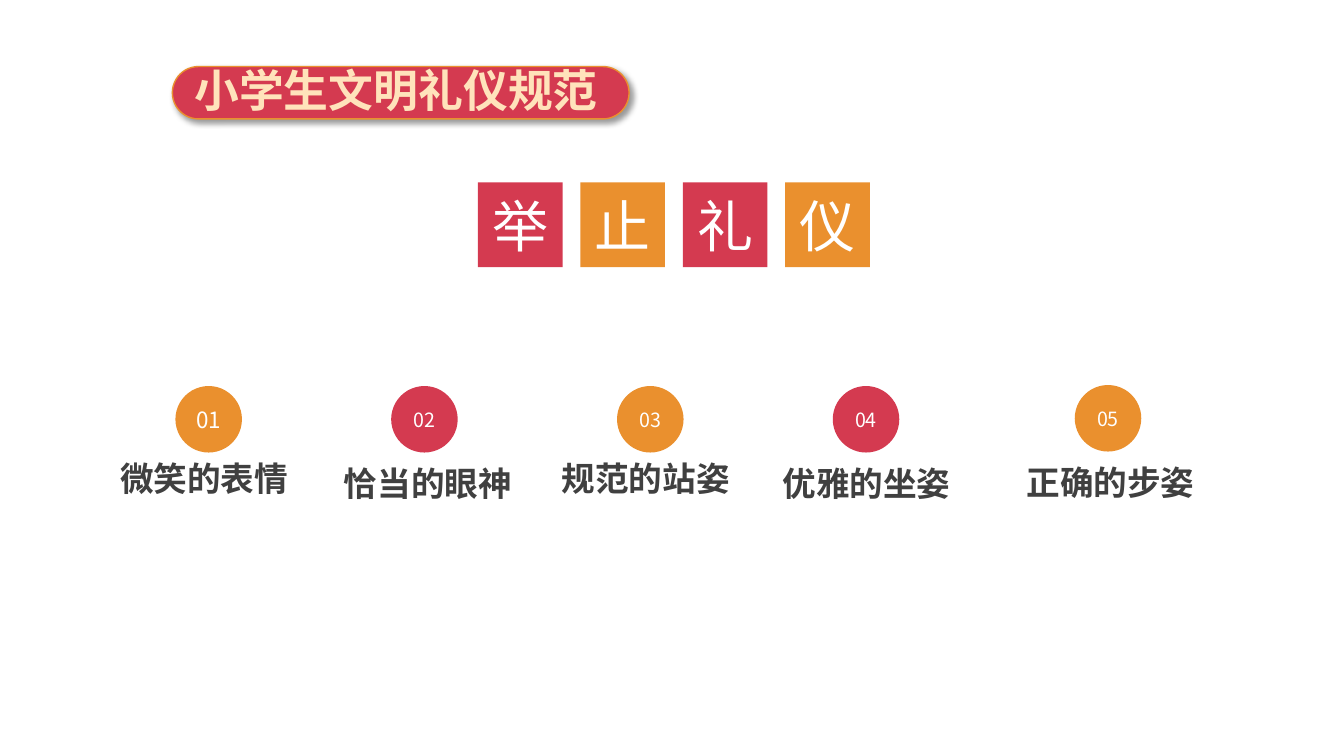
import pptx
import pptx.util
import pptx.dml.color
import pptx.enum.shapes
import pptx.enum.text
import pptx.oxml
import pptx.oxml.ns

Inches, Pt = pptx.util.Inches, pptx.util.Pt
SHAPE = pptx.enum.shapes.MSO_SHAPE
FONT = "Noto Sans CJK SC"
RED, ORANGE, CREAM, GREY, WHITE = "D43A50", "EA902E", "FFE3BB", "404040", "FFFFFF"

BANNER = "小学生文明礼仪规范"
HEADING = "举止礼仪"
# number, number size, colour, circle left, circle top, label, label left, label top
MANNERS = [
    ("01", 16, ORANGE, 1.74, 3.83, "微笑的表情", 0.26, 4.49),
    ("02", 14, RED, 3.88, 3.83, "恰当的眼神", 2.48, 4.54),
    ("03", 14, ORANGE, 6.12, 3.83, "规范的站姿", 4.64, 4.49),
    ("04", 14, RED, 8.26, 3.83, "优雅的坐姿", 6.83, 4.54),
    ("05", 14, ORANGE, 10.66, 3.82, "正确的步姿", 9.25, 4.53),
]
TILE_LEFT, TILE_TOP, TILE_SIZE, TILE_STEP = 4.74, 1.81, 0.84, 1.016
CIRCLE_SIZE = 0.66
LABEL_WIDTH, LABEL_HEIGHT = 3.53, 0.5

BANNER_SHADOW = (
    f'<a:effectLst {pptx.oxml.ns.nsdecls("a")}>'
    '<a:outerShdw blurRad="50800" dist="38100" dir="2700000" algn="tl" rotWithShape="0">'
    '<a:srgbClr val="000000"><a:alpha val="40000"/></a:srgbClr>'
    '</a:outerShdw></a:effectLst>'
)


def color(hex_code):
    return pptx.dml.color.RGBColor.from_string(hex_code)


def write(shape, text, size, ink, bold=False):
    """Put one centred line into the shape, with the font set for Latin and Chinese."""
    shape.text_frame.word_wrap = True
    paragraph = shape.text_frame.paragraphs[0]
    paragraph.text = text
    paragraph.alignment = pptx.enum.text.PP_ALIGN.CENTER
    font = paragraph.font
    font.size, font.bold, font.name = Pt(size), bold, FONT
    font.color.rgb = color(ink)
    font._element.append(pptx.oxml.parse_xml(
        f'<a:ea {pptx.oxml.ns.nsdecls("a")} typeface="{FONT}"/>'))


def add_block(kind, left, top, width, height, fill):
    block = slide.shapes.add_shape(
        kind, Inches(left), Inches(top), Inches(width), Inches(height))
    block.shadow.inherit = False
    block.fill.solid()
    block.fill.fore_color.rgb = color(fill)
    block.line.fill.background()
    block.text_frame.vertical_anchor = pptx.enum.text.MSO_ANCHOR.MIDDLE
    return block


def add_label(left, top, width, height, text, size, ink):
    label = slide.shapes.add_textbox(
        Inches(left), Inches(top), Inches(width), Inches(height))
    write(label, text, size, ink, bold=True)


deck = pptx.Presentation()
deck.slide_width, deck.slide_height = Inches(13.33), Inches(7.5)
slide = deck.slides.add_slide(deck.slide_layouts[6])

for index, character in enumerate(HEADING):
    tile = add_block(SHAPE.RECTANGLE, TILE_LEFT + index * TILE_STEP, TILE_TOP,
                     TILE_SIZE, TILE_SIZE, (RED, ORANGE)[index % 2])
    write(tile, character, 40, WHITE)

for number, size, fill, left, top, manner, label_left, label_top in MANNERS:
    add_label(label_left, label_top, LABEL_WIDTH, LABEL_HEIGHT, manner, 24, GREY)
    circle = add_block(SHAPE.OVAL, left, top, CIRCLE_SIZE, CIRCLE_SIZE, fill)
    write(circle, number, size, WHITE)

banner = add_block(SHAPE.ROUNDED_RECTANGLE, 1.71, 0.66, 4.53, 0.52, RED)
banner.adjustments[0] = 0.5
banner.line.color.rgb = color(ORANGE)
banner.line.width = Pt(1)
banner_properties = banner._element.spPr
banner_properties.replace(
    banner_properties.find(pptx.oxml.ns.qn("a:effectLst")),
    pptx.oxml.parse_xml(BANNER_SHADOW))
add_label(1.68, 0.57, 4.5, 0.64, BANNER, 32, CREAM)

deck.save("out.pptx")
